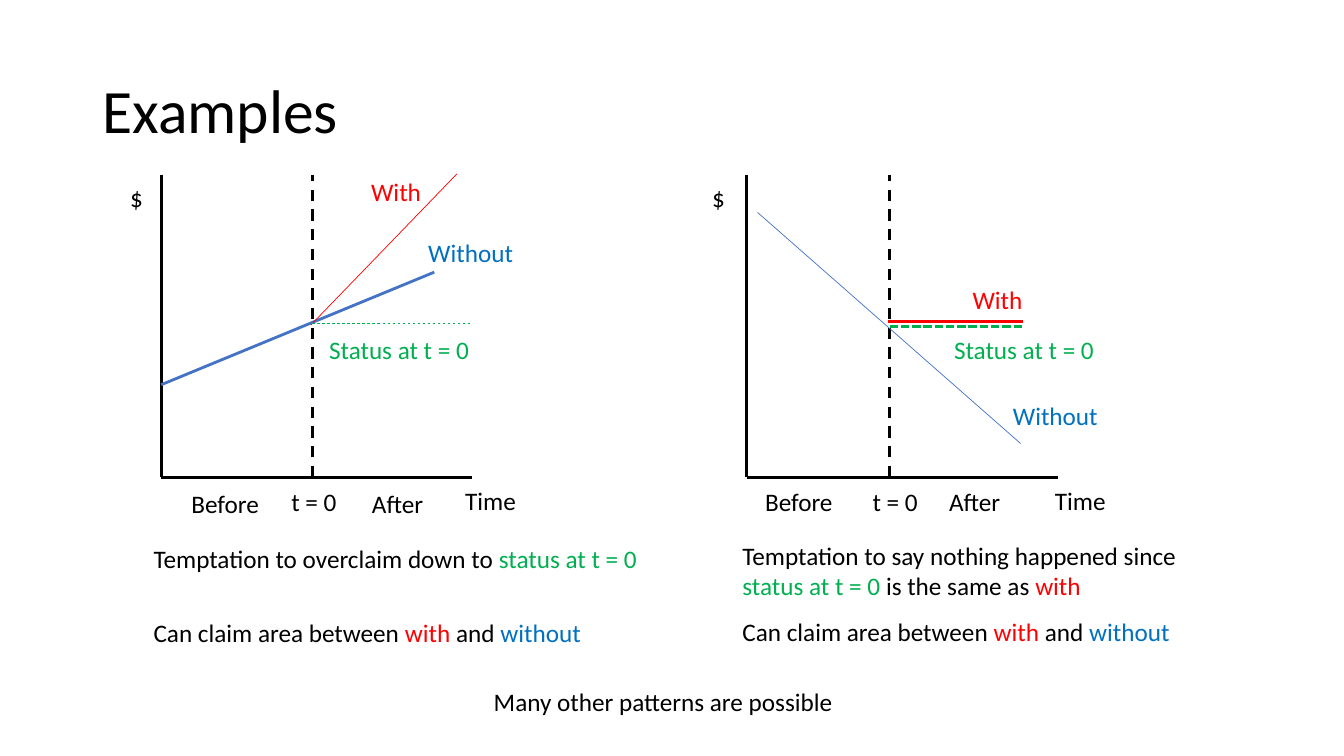
from lxml import etree
from pptx import Presentation
from pptx.dml.color import RGBColor
from pptx.enum.dml import MSO_LINE
from pptx.enum.shapes import MSO_CONNECTOR
from pptx.enum.text import MSO_ANCHOR
from pptx.oxml.ns import qn
from pptx.util import Inches, Pt

STRAIGHT = MSO_CONNECTOR.STRAIGHT
DASH, SQUARE_DASH = MSO_LINE.DASH, MSO_LINE.SQUARE_DOT
TOP, MIDDLE = MSO_ANCHOR.TOP, MSO_ANCHOR.MIDDLE
SLIDE_W, SLIDE_H = 13.33, 7.5
COLS, ROWS = 160, 90
BLACK, RED, GREEN, BLUE, LINE_BLUE = "000000", "FF0000", "00B050", "0070C0", "4472C4"
THIN, THICK = 0.5, 2
PLOT_W, PLOT_H = 37, 36
LABEL_WIDTHS = {"With": 9.6, "Without": 14, "Status at t = 0": 21}
CLAIM = [("Can claim area between ", BLACK), ("with", RED), (" and ", BLACK), ("without", BLUE)]


def rgb(value):
    return RGBColor.from_string(value)


def col(n):
    return Inches(SLIDE_W * n / COLS)


def row(n):
    return Inches(SLIDE_H * n / ROWS)


def add_text(s, box, runs, size=18, anchor=TOP, wrap=True, spacing=None):
    x, y, w, h = box
    tf = s.shapes.add_textbox(col(x), row(y), col(w), row(h)).text_frame
    tf.word_wrap = wrap
    tf.vertical_anchor = anchor
    p = tf.paragraphs[0]
    p.font.name, p.font.size = "Calibri", Pt(size)
    if spacing:
        p.line_spacing = spacing
    for text, color in runs:
        r = p.add_run()
        r.text = text
        r.font.color.rgb = rgb(color)


def add_line(s, origin, start, end, color, width=THICK, dash=None):
    x, y = origin
    line = s.shapes.add_connector(STRAIGHT, col(x + start[0]), row(y + start[1]),
                                  col(x + end[0]), row(y + end[1]))
    line.line.color.rgb = rgb(color)
    line.line.width = Pt(width)
    if dash:
        line.line.dash_style = dash
    etree.SubElement(line._element.spPr, qn("a:effectLst"))


def add_plot(s, origin, zero, lines, curve_labels, axis_labels):
    x, y = origin
    add_line(s, origin, (0, 0), (0, PLOT_H), BLACK)
    add_line(s, origin, (0, PLOT_H), (PLOT_W, PLOT_H), BLACK)
    add_line(s, origin, (zero, PLOT_H), (zero, 0), BLACK, dash=DASH)
    for line in lines:
        add_line(s, origin, *line)
    for text, color, dx, dy in curve_labels:
        add_text(s, (x + dx, y + dy, LABEL_WIDTHS[text], 4.2), [(text, color)], anchor=MIDDLE)
    for text, dx, dy, w in axis_labels:
        add_text(s, (x + dx, y + dy, w, 4.8), [(text, BLACK)])


def add_captions(s, x, claim_y, temptation_y, w, temptation):
    add_text(s, (x, temptation_y, w, 4.6), temptation)
    add_text(s, (x, claim_y, w, 4.8), CLAIM)


def build_examples(prs):
    s = prs.slides.add_slide(prs.slide_layouts[6])
    add_text(s, (11, 4.8, 138, 17.4), [("Examples", BLACK)], 44, MIDDLE, spacing=0.9)

    add_plot(
        s, (19.2, 20.8), 18,
        [((0, 25), (32.5, 11.6), LINE_BLUE),
         ((35.2, -0.1), (17.8, 17.9), RED, THIN),
         ((18, 17.7), (PLOT_W, 17.7), GREEN, THIN, DASH)],
        [("With", RED, 23.8, -0.1),
         ("Without", BLUE, 30.6, 7.1),
         ("Status at t = 0", GREEN, 18.8, 18.7)],
        [("$", -4.9, 0.3, 4.3), ("Before", 2.4, 36.7, 11.6), ("t = 0", 14.3, 36.5, 8.6),
         ("After", 23.9, 36.7, 9.2), ("Time", 35, 36.4, 9.2)])
    add_captions(s, 17.1, 72.9, 64.1, 65,
                 [("Temptation to overclaim down to ", BLACK), ("status at t = 0", GREEN)])

    add_plot(
        s, (88.9, 20.8), 17,
        [((1.3, 4.5), (32.6, 32), LINE_BLUE, THIN),
         ((16.8, 17.5), (32.9, 17.5), RED),
         ((17, 18.1), (33, 18.1), GREEN, THICK, SQUARE_DASH)],
        [("With", RED, 25.7, 12.7),
         ("Without", BLUE, 30.5, 26.6),
         ("Status at t = 0", GREEN, 23.5, 18.7)],
        [("$", -5.3, 0.3, 4.3), ("Before", 1, 36.5, 11.6), ("t = 0", 13.8, 36.5, 9.4),
         ("After", 22.9, 36.5, 9.2), ("Time", 35.5, 36.4, 9.2)])
    add_captions(s, 87.2, 72.8, 63.7, 57,
                 [("Temptation to say nothing happened since ", BLACK), ("status at t = 0 ", GREEN),
                  ("is the same as ", BLACK), ("with", RED)])

    add_text(s, (57.6, 81.1, 47.2, 4.8), [("Many other patterns are possible", BLACK)], wrap=False)


def main():
    prs = Presentation()
    prs.slide_width, prs.slide_height = Inches(SLIDE_W), Inches(SLIDE_H)
    build_examples(prs)
    prs.save("out.pptx")


if __name__ == "__main__":
    main()
